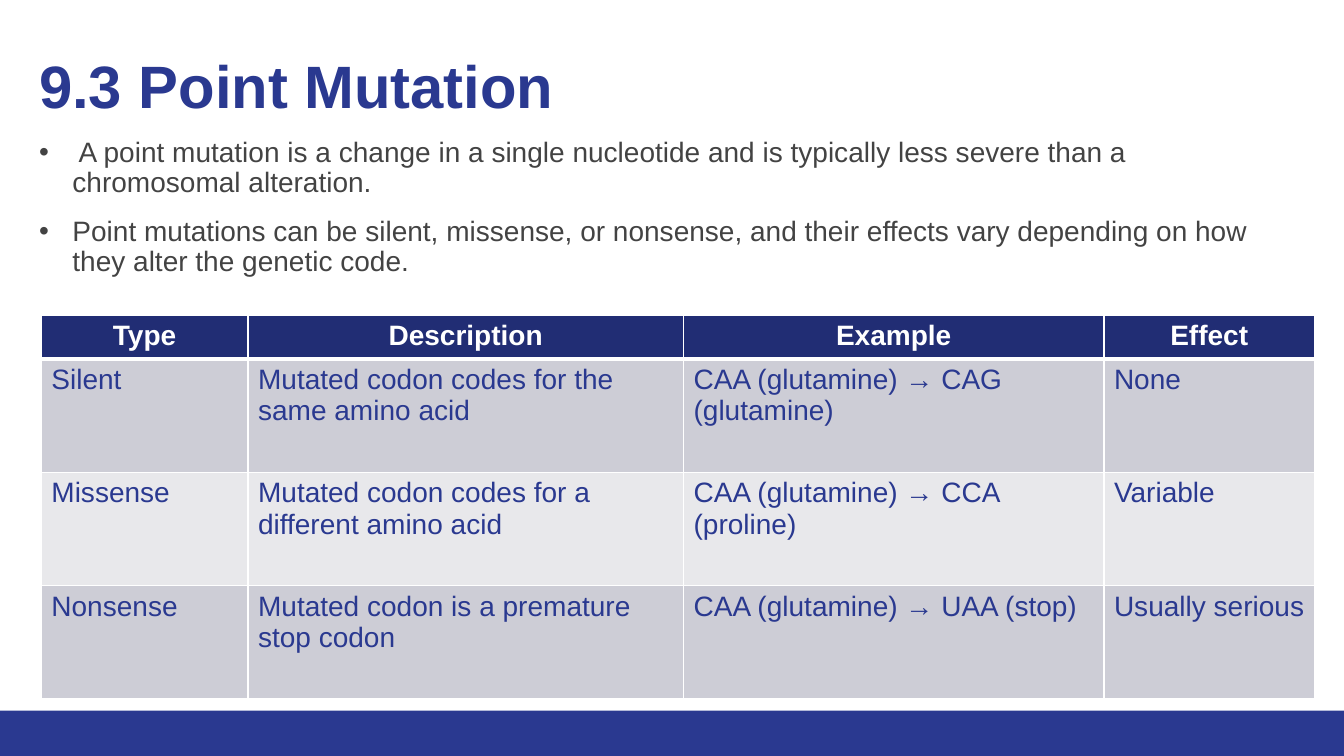
import pptx
import pptx.util
import pptx.dml.color
import pptx.enum.shapes
import pptx.enum.text
import pptx.oxml
import pptx.oxml.ns
from lxml import etree

Inches = pptx.util.Inches
Pt = pptx.util.Pt

BLUE = "2A3990"
WHITE = "FFFFFF"
TITLE_FORMAT = {"name": "Arial", "size": Pt(42.7), "bold": True, "color": BLUE}
BULLET_FORMAT = {"name": "Arial", "size": Pt(20), "bold": False, "color": "434343"}
HEADER_FORMAT = {"name": "Arial", "size": Pt(20), "bold": True, "color": WHITE}
CELL_FORMAT = {"name": "Arial", "size": Pt(20), "bold": False, "color": BLUE}

BULLETS = [
    " A point mutation is a change in a single nucleotide and is typically less severe than a chromosomal alteration.",
    "Point mutations can be silent, missense, or nonsense, and their effects vary depending on how they alter the genetic code.",
]
COLUMN_WIDTHS = [2.05, 4.32, 4.17, 2.09]
HEADER_HEIGHT = 0.43
MUTATIONS = [
    ["Type", "Description", "Example", "Effect"],
    ["Silent", "Mutated codon codes for the same amino acid", "CAA (glutamine) → CAG (glutamine)", "None"],
    ["Missense", "Mutated codon codes for a different amino acid", "CAA (glutamine) → CCA (proline)", "Variable"],
    ["Nonsense", "Mutated codon is a premature stop codon", "CAA (glutamine) → UAA (stop)", "Usually serious"],
]


def rgb(color):
    return pptx.dml.color.RGBColor.from_string(color)


def format_font(font, values):
    for name, value in values.items():
        if name == "color":
            font.color.rgb = rgb(value)
        else:
            setattr(font, name, value)


def add_text_frame(slide, box):
    text_frame = slide.shapes.add_textbox(*map(Inches, box)).text_frame
    text_frame.word_wrap = True
    return text_frame


def add_bullet(paragraph):
    properties = paragraph._p.get_or_add_pPr()
    properties.set("marL", str(Inches(0.33)))
    properties.set("indent", str(Inches(-0.33)))
    for tag, attribute, value in [("a:buFont", "typeface", "Arial"), ("a:buChar", "char", "•")]:
        etree.SubElement(properties, pptx.oxml.ns.qn(tag)).set(attribute, value)


def add_footer_band(slide, box):
    band = slide.shapes.add_shape(pptx.enum.shapes.MSO_SHAPE.RECTANGLE, *map(Inches, box))
    band.shadow.inherit = False
    band.fill.solid()
    band.fill.fore_color.rgb = rgb(BLUE)
    band.line.fill.background()


def add_title(slide, box):
    text_frame = add_text_frame(slide, box)
    text_frame.vertical_anchor = pptx.enum.text.MSO_ANCHOR.MIDDLE
    paragraph = text_frame.paragraphs[0]
    paragraph.text = "9.3 Point Mutation"
    paragraph.line_spacing = 0.9
    format_font(paragraph.font, TITLE_FORMAT)


def add_bullets(slide, box):
    text_frame = add_text_frame(slide, box)
    for index, text in enumerate(BULLETS):
        paragraph = text_frame.add_paragraph() if index else text_frame.paragraphs[0]
        paragraph.text = text
        add_bullet(paragraph)
        paragraph.line_spacing = 0.9
        if index:
            paragraph.space_before = Pt(13.3)
        format_font(paragraph.font, BULLET_FORMAT)


def set_borders(cell, widths):
    properties = cell._tc.get_or_add_tcPr()
    for position, (side, width) in enumerate(widths.items()):
        border = pptx.oxml.parse_xml(
            f'<a:{side} {pptx.oxml.ns.nsdecls("a")} w="{Pt(width)}">'
            f'<a:solidFill><a:srgbClr val="{WHITE}"/></a:solidFill></a:{side}>'
        )
        properties.insert(position, border)


def add_mutation_table(slide, box):
    left, top, width, height = box
    table = slide.shapes.add_table(len(MUTATIONS), len(COLUMN_WIDTHS), *map(Inches, box)).table
    for column, column_width in zip(table.columns, COLUMN_WIDTHS):
        column.width = Inches(column_width)
    body_height = (height - HEADER_HEIGHT) / (len(MUTATIONS) - 1)
    for row_index, texts in enumerate(MUTATIONS):
        is_header = row_index == 0
        table.rows[row_index].height = Inches(HEADER_HEIGHT if is_header else body_height)
        fill = "212D74" if is_header else ("E8E8EB", "CDCDD6")[row_index % 2]
        for column_index, text in enumerate(texts):
            cell = table.cell(row_index, column_index)
            cell.fill.solid()
            cell.fill.fore_color.rgb = rgb(fill)
            top_width = 3 if row_index == 1 else 1
            bottom_width = 3 if is_header else 1
            set_borders(cell, {"lnL": 1, "lnR": 1, "lnT": top_width, "lnB": bottom_width})
            paragraph = cell.text_frame.paragraphs[0]
            paragraph.text = text
            if is_header:
                paragraph.alignment = pptx.enum.text.PP_ALIGN.CENTER
            format_font(paragraph.font, HEADER_FORMAT if is_header else CELL_FORMAT)


def build_slide(presentation):
    slide = presentation.slides.add_slide(presentation.slide_layouts[6])
    add_footer_band(slide, (0, 7.05, 13.33, 0.45))
    add_title(slide, (0.29, 0.16, 12.69, 1.45))
    add_bullets(slide, (0.29, 1.32, 12.69, 1.6))
    add_mutation_table(slide, (0.41, 3.13, 12.63, 3.8))


def main():
    presentation = pptx.Presentation()
    presentation.slide_width = Inches(13.33)
    presentation.slide_height = Inches(7.5)
    build_slide(presentation)
    presentation.save("out.pptx")


if __name__ == "__main__":
    main()
